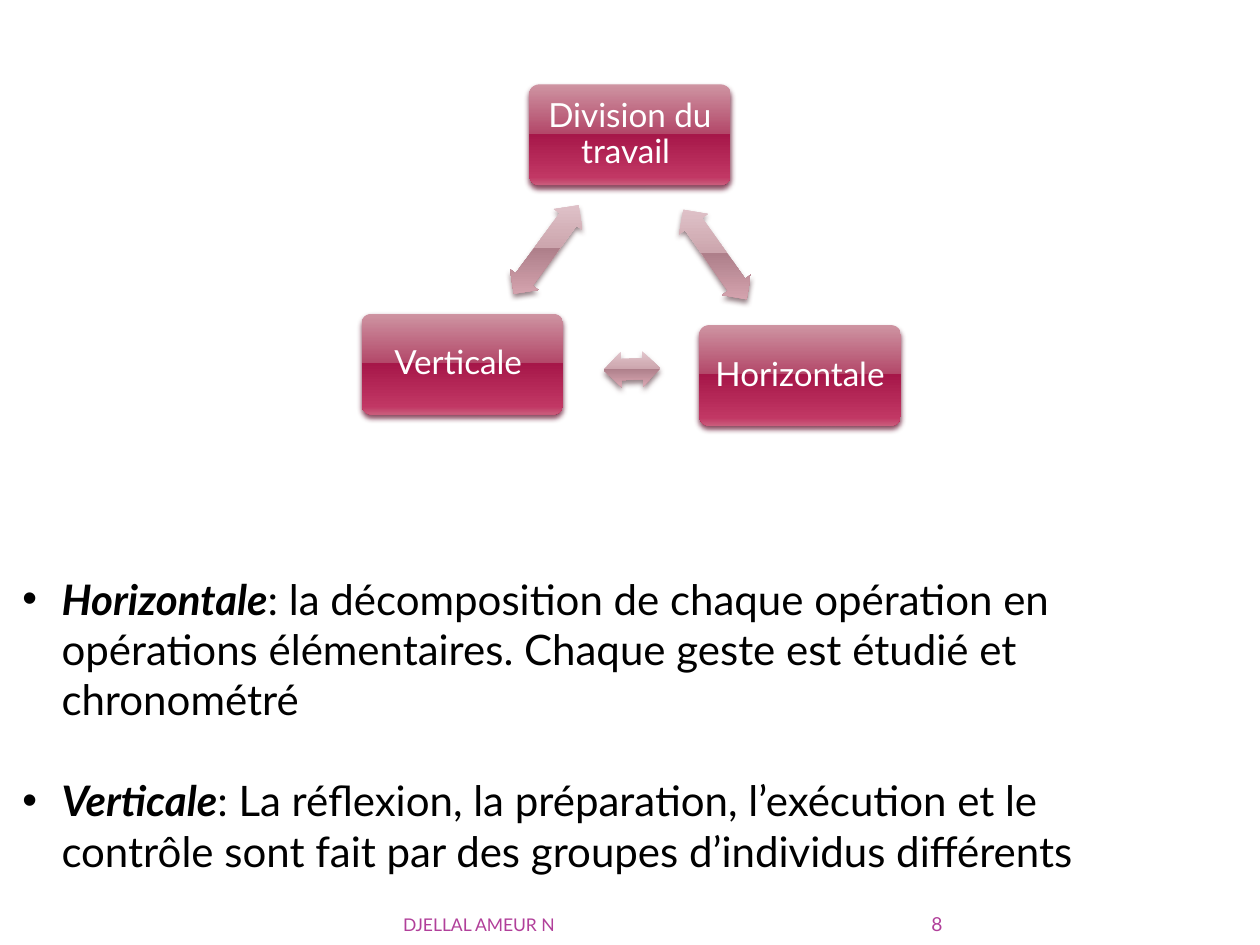
import copy

import lxml.etree
import pptx
import pptx.dml.color
import pptx.enum.shapes
import pptx.enum.text
import pptx.oxml.ns
import pptx.util

COLUMNS, ROWS = 100, 75
CELL = pptx.util.Inches(0.1)
FONT = "Lato"
PLUM = "B13F9A"
STOPS = (0, 0.49, 0.49, 0.92, 1)
NODE_COLORS = ("CE94A2", "B34869", "A61749", "C13764", "CA5D7C")
ARROW_COLORS = ("E3C8CE", "CCA5AD", "AE7F8A", "D5A4AF", "DEB2BC")
NODE_SIZE = (16, 8)
ALIGN = pptx.enum.text.PP_ALIGN
ANCHOR = pptx.enum.text.MSO_ANCHOR
SHAPES = pptx.enum.shapes.MSO_SHAPE


def color(hex_text):
    return pptx.dml.color.RGBColor.from_string(hex_text)


def place(*cells):
    return [round(value * CELL) for value in cells]


def add_child(parent, tag, **attributes):
    child = lxml.etree.SubElement(parent, pptx.oxml.ns.qn(tag))
    for name, value in attributes.items():
        child.set(name, str(value))
    return child


def add_shadow(shape, hex_text):
    shape.shadow.inherit = False
    effects = shape.element.spPr.find(pptx.oxml.ns.qn("a:effectLst"))
    shadow = add_child(effects, "a:outerShdw", blurRad=pptx.util.Pt(3.1),
                       dist=pptx.util.Pt(2), dir=5400000, rotWithShape=0)
    tint = add_child(shadow, "a:srgbClr", val=color(hex_text))
    add_child(tint, "a:alpha", val=83000)


def fill_gradient(shape, colors):
    shape.fill.gradient()
    shape.fill.gradient_angle = 270
    gradient = shape.element.spPr.find(pptx.oxml.ns.qn("a:gradFill"))
    gradient.set("rotWithShape", "0")
    stop_list = gradient.find(pptx.oxml.ns.qn("a:gsLst"))
    while len(stop_list) < len(STOPS):
        stop_list.append(copy.deepcopy(stop_list[0]))
    for stop, position, hex_text in zip(shape.fill.gradient_stops, STOPS, colors):
        stop.position = position
        stop.color.rgb = color(hex_text)


def add_glossy(page, kind, area, adjustments, colors, shadow):
    shape = page.shapes.add_shape(kind, *place(*area))
    for index, value in enumerate(adjustments):
        shape.adjustments[index] = value
    fill_gradient(shape, colors)
    shape.line.fill.background()
    add_shadow(shape, shadow)
    return shape


def set_frame(frame, inset, anchor):
    frame.word_wrap = True
    frame.vertical_anchor = anchor
    frame.margin_left = frame.margin_right = pptx.util.Inches(inset[0])
    frame.margin_top = frame.margin_bottom = pptx.util.Inches(inset[1])


def add_span(para, text, size, hex_text, bold=False, italic=False):
    span = para.add_run()
    span.text = text
    span.font.name = FONT
    span.font.size = pptx.util.Pt(size)
    span.font.color.rgb = color(hex_text)
    span.font.bold = bold
    span.font.italic = italic


def add_node(page, left, top, text):
    node = add_glossy(page, SHAPES.ROUNDED_RECTANGLE, (left, top, *NODE_SIZE),
                      [0.1], NODE_COLORS, "722640")
    set_frame(node.text_frame, (0.1, 0.1), ANCHOR.MIDDLE)
    para = node.text_frame.paragraphs[0]
    para.alignment = ALIGN.CENTER
    para.line_spacing = 0.9
    add_span(para, text, 19, "FFFFFF")


def add_arrow(page, left, top, length, angle):
    arrow = add_glossy(page, SHAPES.LEFT_RIGHT_ARROW, (left, top, length, 2.8),
                       [0.6, 0.5], ARROW_COLORS, "856C72")
    arrow.rotation = angle


def add_definitions(page, area, definitions):
    box = page.shapes.add_textbox(*place(*area))
    frame = box.text_frame
    set_frame(frame, (0.1, 0.05), ANCHOR.TOP)
    frame.auto_size = pptx.enum.text.MSO_AUTO_SIZE.SHAPE_TO_FIT_TEXT
    indent = pptx.util.Inches(0.31)
    for index, (term, meaning) in enumerate(definitions):
        para = frame.add_paragraph() if index else frame.paragraphs[0]
        properties = para._p.get_or_add_pPr()
        properties.set("marL", str(indent))
        properties.set("indent", str(-indent))
        add_child(properties, "a:buFont", typeface="Arial")
        add_child(properties, "a:buChar", char="•")
        if index:
            para.space_before = pptx.util.Pt(28.8)
        add_span(para, term, 24, "000000", bold=True, italic=True)
        add_span(para, meaning, 24, "000000")


def add_footer(page, area, text, size, inset):
    box = page.shapes.add_textbox(*place(*area))
    set_frame(box.text_frame, (inset, 0), ANCHOR.BOTTOM)
    para = box.text_frame.paragraphs[0]
    para.alignment = ALIGN.RIGHT
    add_span(para, text, size, PLUM)


def main():
    deck = pptx.Presentation()
    deck.slide_width = COLUMNS * CELL
    deck.slide_height = ROWS * CELL
    page = deck.slides.add_slide(deck.slide_layouts[6])

    add_node(page, 42, 6.7, "Division du travail ")
    add_arrow(page, 52.4, 18.8, 8.7, 54.7)
    add_node(page, 55.5, 25.8, "Horizontale ")
    add_arrow(page, 47.9, 27.9, 4.5, 178)
    add_node(page, 28.7, 24.9, "Verticale ")
    add_arrow(page, 39, 18.4, 8.7, 306.2)

    add_definitions(page, (0.8, 45, 88.2, 33.3), [
        ("Horizontale", ": la décomposition de chaque opération en opérations "
         "élémentaires. Chaque geste est étudié et chronométré"),
        ("Verticale", ": La réflexion, la préparation, l’exécution et le "
         "contrôle sont fait par des groupes d’individus différents"),
    ])
    add_footer(page, (68.4, 71.7, 6.4, 2.5), "8", 11, 0)
    add_footer(page, (5, 71.7, 40, 2.5), "DJELLAL AMEUR N", 10, 0.1)
    deck.save("out.pptx")


if __name__ == "__main__":
    main()
